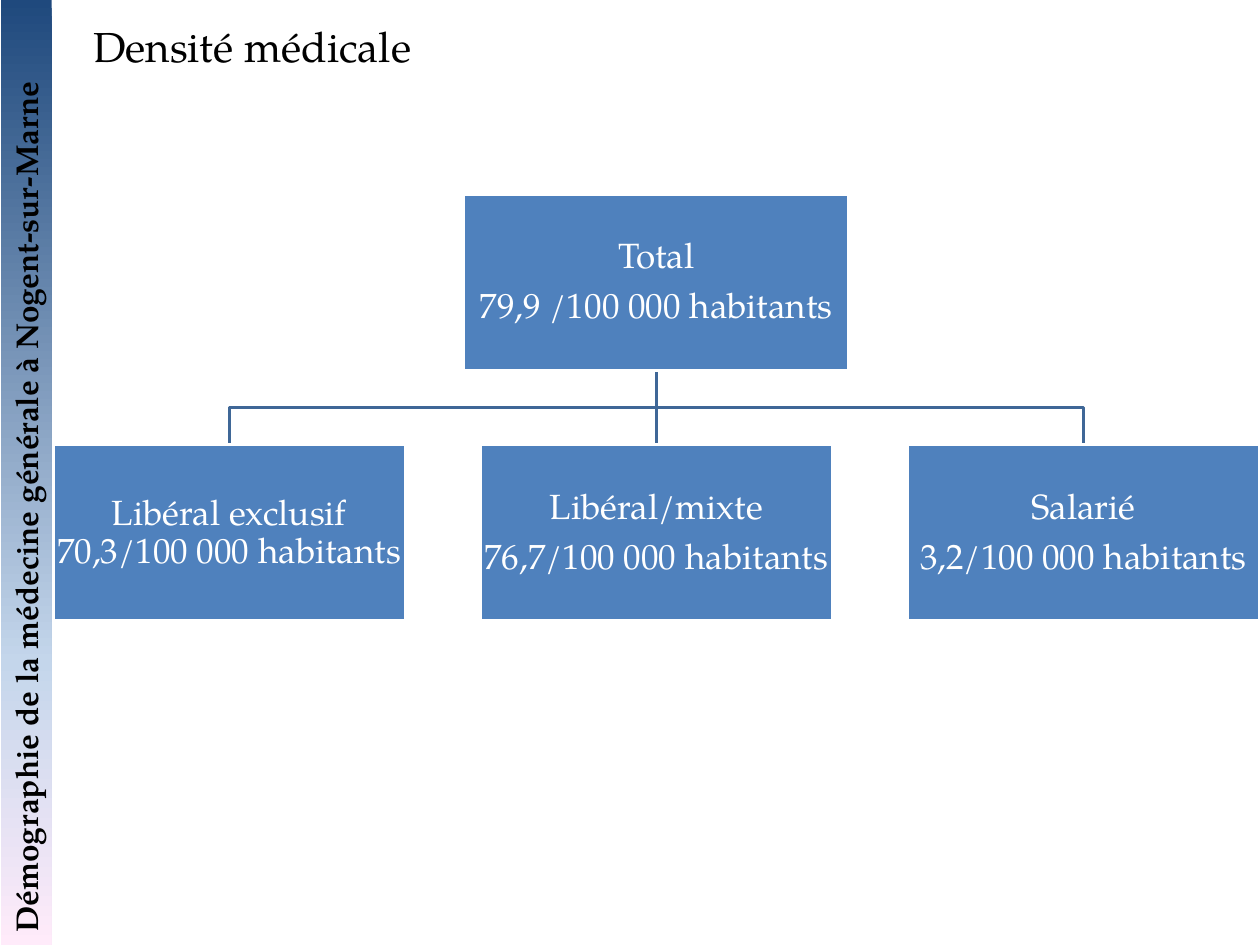
from dataclasses import dataclass

from lxml.etree import SubElement
from pptx import Presentation
from pptx.dml.color import RGBColor
from pptx.enum.shapes import MSO_CONNECTOR as Connector, MSO_SHAPE as Shape
from pptx.enum.text import MSO_ANCHOR as Anchor, PP_ALIGN as Align
from pptx.oxml.ns import qn
from pptx.util import Inches, Pt


@dataclass(frozen=True)
class Theme:
    """Colours, font and sizes of the slide."""
    font: str = "TeX Gyre Pagella"
    ink: str = "000000"
    paper: str = "FFFFFF"
    box: str = "4F81BD"
    link: str = "3F6797"
    bar: tuple = ((0, "1F497D"), (70, "C4D6EB"), (100, "FFEBFA"))
    title_size: int = 24
    bar_size: int = 18
    box_size: int = 20
    line_width: int = 2


THEME = Theme()
TOTAL = ["Total", "79,9 /100 000 habitants"]
BRANCHES = [
    ["Libéral exclusif 70,3/100 000 habitants"],
    ["Libéral/mixte", "76,7/100 000 habitants"],
    ["Salarié", "3,2/100 000 habitants"],
]


def style_text(para, size, color, bold=False):
    """Format every run of a paragraph."""
    for span in para.runs:
        span.font.name = THEME.font
        span.font.size = Pt(size)
        span.font.bold = bold
        span.font.color.rgb = RGBColor.from_string(color)


def style_line(line, color):
    """Give an outline its colour and width."""
    line.color.rgb = RGBColor.from_string(color)
    line.width = Pt(THEME.line_width)


def add_box(page, center, top, width, lines):
    """Add one box of the chart, centred on a given x."""
    box = page.shapes.add_shape(
        Shape.RECTANGLE, Inches(center - width / 2), Inches(top), Inches(width), Inches(1.4))
    box.shadow.inherit = False
    box.fill.solid()
    box.fill.fore_color.rgb = RGBColor.from_string(THEME.box)
    style_line(box.line, THEME.paper)
    frame = box.text_frame
    frame.word_wrap = True
    frame.vertical_anchor = Anchor.MIDDLE
    frame.margin_left = frame.margin_right = Inches(0.01)
    frame.margin_top = frame.margin_bottom = Inches(0.01)
    frame.text = "\n".join(lines)
    for para in frame.paragraphs:
        para.alignment = Align.CENTER
        para.line_spacing = 0.9
        para.space_after = Pt(7)
        style_text(para, THEME.box_size, THEME.paper)
    return box


def add_straight_link(page, parent, child):
    """Join a parent box to the child right below it."""
    link = page.shapes.add_connector(Connector.STRAIGHT, 0, 0, 0, 0)
    link.begin_connect(parent, 2)
    link.end_connect(child, 0)
    SubElement(link._element.spPr, qn("a:effectLst"))
    return link


def add_elbow_link(page, parent, child):
    """Draw the angled link from a parent box to a child at its side."""
    start_x = parent.left + parent.width // 2
    start_y = parent.top + parent.height
    end_x = child.left + child.width // 2
    middle_y = (start_y + child.top) // 2
    builder = page.shapes.build_freeform(start_x, start_y)
    builder.add_line_segments(
        [(start_x, middle_y), (end_x, middle_y), (end_x, child.top)], close=False)
    link = builder.convert_to_shape()
    link.shadow.inherit = False
    link.fill.background()
    return link


def add_chart_tree(page):
    """Build the boxes and put their links behind them."""
    center, step = 5.21, 3.39
    total = add_box(page, center, 1.54, 3.06, TOTAL)
    for column, lines in enumerate(BRANCHES, start=-1):
        child = add_box(page, center + column * step, 3.53, 2.8, lines)
        add_link = add_elbow_link if column else add_straight_link
        link = add_link(page, total, child)
        style_line(link.line, THEME.link)
        page.shapes._spTree.insert(2, link._element)


def add_title(page):
    """Add the slide title."""
    title = page.shapes.add_textbox(Inches(0.64), Inches(0.11), Inches(2.76), Inches(0.51))
    title.text_frame.word_wrap = False
    title.text_frame.text = "Densité médicale"
    style_text(title.text_frame.paragraphs[0], THEME.title_size, THEME.ink)


def fill_gradient(shape, stops):
    """Fill a shape from screen top to bottom, whatever its rotation."""
    shape.fill.gradient()
    gradient = shape._element.spPr.find(qn("a:gradFill"))
    gradient.set("rotWithShape", "0")
    gradient.find(qn("a:lin")).set("ang", "5400000")
    stop_list = gradient.find(qn("a:gsLst"))
    for stop in list(stop_list):
        stop_list.remove(stop)
    for position, color in stops:
        stop = SubElement(stop_list, qn("a:gs"), pos=str(position * 1000))
        SubElement(stop, qn("a:srgbClr"), val=color)


def add_side_bar(page):
    """Add the vertical bar with the subject of the deck."""
    bar = page.shapes.add_shape(
        Shape.RECTANGLE, Inches(-3.54), Inches(3.55), Inches(7.5), Inches(0.4))
    bar.rotation = 270
    bar.shadow.inherit = False
    bar.line.fill.background()
    fill_gradient(bar, THEME.bar)
    frame = bar.text_frame
    frame.word_wrap = True
    frame.vertical_anchor = Anchor.TOP
    frame.text = "Démographie de la médecine générale à Nogent-sur-Marne"
    para = frame.paragraphs[0]
    para.alignment = Align.LEFT
    style_text(para, THEME.bar_size, THEME.ink, bold=True)


def main():
    """Build the slide and save it."""
    deck = Presentation()
    deck.slide_width, deck.slide_height = Inches(10), Inches(7.5)
    page = deck.slides.add_slide(deck.slide_layouts[6])
    add_chart_tree(page)
    add_title(page)
    add_side_bar(page)
    deck.save("out.pptx")


if __name__ == "__main__":
    main()
